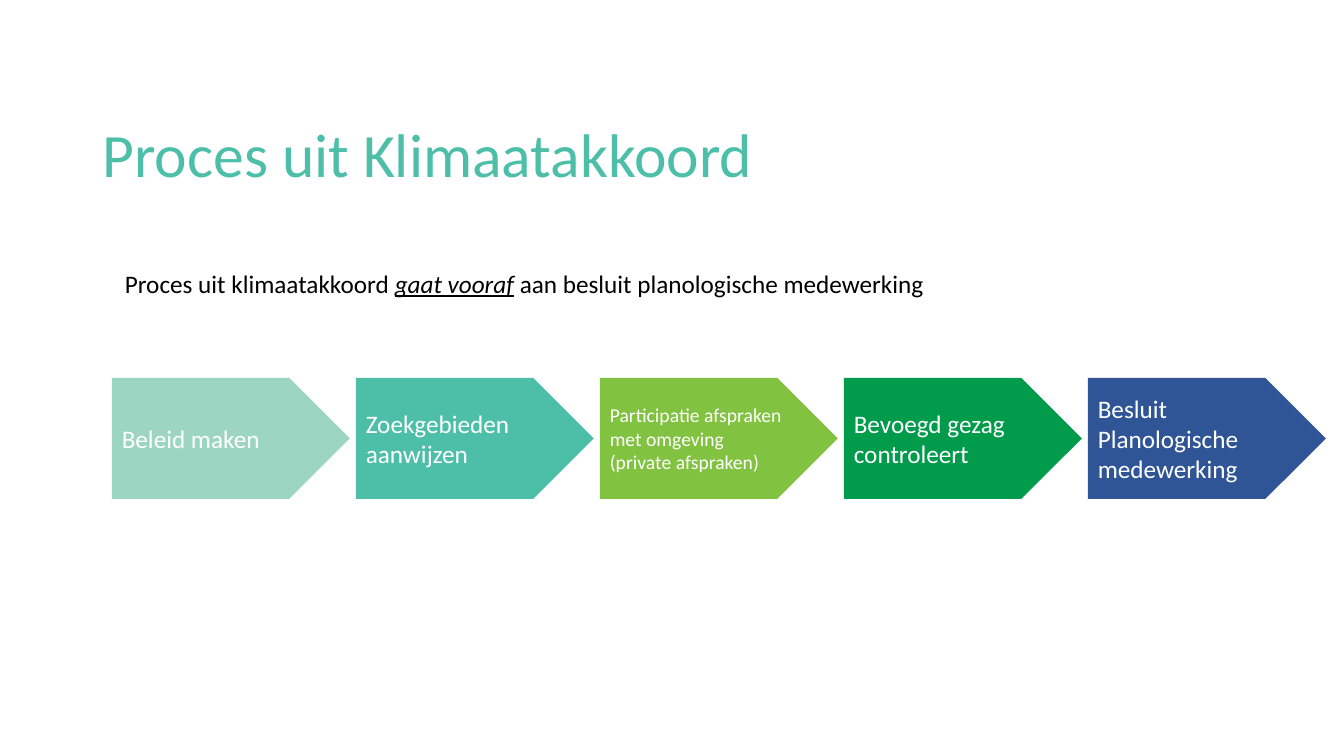
from dataclasses import dataclass

import pptx
import pptx.dml.color
import pptx.enum.shapes
import pptx.enum.text
import pptx.util

Inches = pptx.util.Inches
MIDDLE = pptx.enum.text.MSO_ANCHOR.MIDDLE


@dataclass(frozen=True)
class Theme:
    font: str = "Calibri"
    title_size: int = 44
    body_size: int = 18
    small_size: int = 14
    mint: str = "9DD5C3"
    teal: str = "4DBFA9"
    lime: str = "81C241"
    green: str = "009B4B"
    blue: str = "2F5597"
    white: str = "FFFFFF"
    black: str = "000000"


THEME = Theme()

STEPS = [
    (["Beleid maken"], THEME.mint, THEME.body_size),
    (["Zoekgebieden aanwijzen"], THEME.teal, THEME.body_size),
    (["Participatie afspraken met omgeving", "(private afspraken)"], THEME.lime, THEME.small_size),
    (["Bevoegd gezag controleert"], THEME.green, THEME.body_size),
    (["Besluit", "Planologische medewerking"], THEME.blue, THEME.body_size),
]

INTRO = [
    ("Proces uit klimaatakkoord ", {}),
    ("gaat vooraf", {"italic": True, "underline": True}),
    (" aan besluit planologische medewerking", {}),
]


def rgb(color):
    return pptx.dml.color.RGBColor.from_string(color)


def add_run(paragraph, text, size, color, **emphasis):
    run = paragraph.add_run()
    run.text = text
    formats = {"name": THEME.font, "size": pptx.util.Pt(size), **emphasis}
    for attribute, value in formats.items():
        setattr(run.font, attribute, value)
    run.font.color.rgb = rgb(color)


def add_title(slide, left, top, width, height):
    title = slide.shapes.add_textbox(Inches(left), Inches(top), Inches(width), Inches(height))
    frame = title.text_frame
    frame.word_wrap = True
    frame.vertical_anchor = MIDDLE
    heading = frame.paragraphs[0]
    heading.line_spacing = 0.9
    add_run(heading, "Proces uit Klimaatakkoord", THEME.title_size, THEME.teal)


def add_intro(slide, left, top, width, height):
    intro = slide.shapes.add_textbox(Inches(left), Inches(top), Inches(width), Inches(height))
    intro.text_frame.word_wrap = False
    sentence = intro.text_frame.paragraphs[0]
    for text, emphasis in INTRO:
        add_run(sentence, text, THEME.body_size, THEME.black, **emphasis)


def add_step(slide, left, top, width, height, lines, color, size):
    step = slide.shapes.add_shape(
        pptx.enum.shapes.MSO_SHAPE.PENTAGON,
        Inches(left), Inches(top), Inches(width), Inches(height),
    )
    step.shadow.inherit = False
    step.fill.solid()
    step.fill.fore_color.rgb = rgb(color)
    step.line.fill.background()
    frame = step.text_frame
    frame.word_wrap = True
    frame.vertical_anchor = MIDDLE
    for index, text in enumerate(lines):
        paragraph = frame.add_paragraph() if index else frame.paragraphs[0]
        paragraph.alignment = pptx.enum.text.PP_ALIGN.LEFT
        add_run(paragraph, text, size, THEME.white)


def add_process(slide, left, top, width, height, gap=0.06):
    step_width = (width - gap * (len(STEPS) - 1)) / len(STEPS)
    for index, (lines, color, size) in enumerate(STEPS):
        step_left = left + index * (step_width + gap)
        add_step(slide, step_left, top, step_width, height, lines, color, size)


def main():
    presentation = pptx.Presentation()
    presentation.slide_width = Inches(13.33)
    presentation.slide_height = Inches(7.5)
    slide = presentation.slides.add_slide(presentation.slide_layouts[6])
    add_title(slide, 0.92, 0.84, 11.5, 1.45)
    add_process(slide, 1.11, 3.75, 12.04, 1.2)
    add_intro(slide, 1.14, 2.61, 9.14, 0.4)
    presentation.save("out.pptx")


if __name__ == "__main__":
    main()
